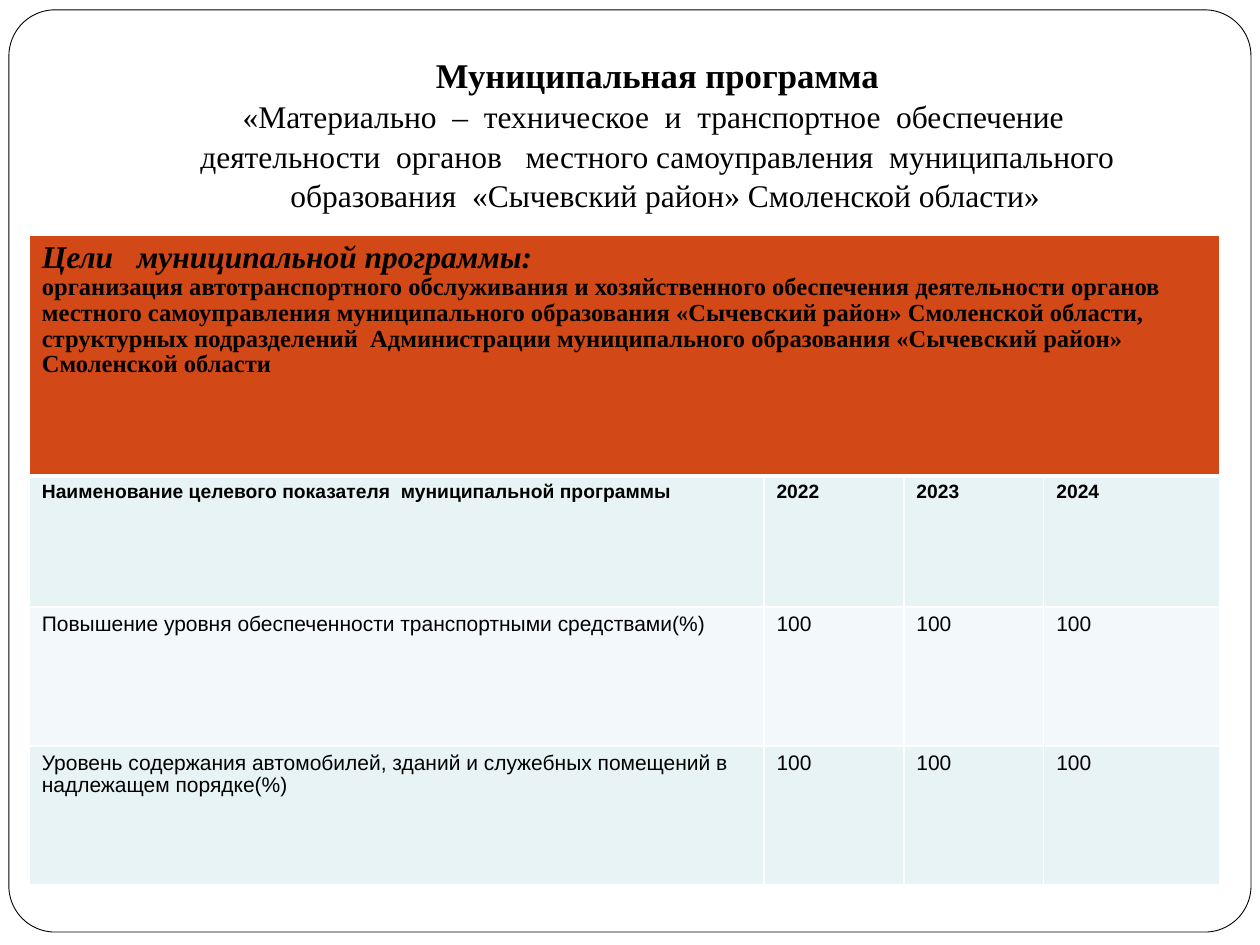
from dataclasses import dataclass

from lxml.etree import SubElement
from pptx import Presentation
from pptx.dml.color import RGBColor
from pptx.enum.shapes import MSO_SHAPE
from pptx.enum.text import MSO_ANCHOR, MSO_AUTO_SIZE, PP_ALIGN
from pptx.oxml.ns import qn
from pptx.util import Cm, Pt


@dataclass(frozen=True)
class Theme:
    black: str = "000000"
    white: str = "FFFFFF"
    goal_fill: str = "D34817"
    bands: tuple = ("E7F3F4", "F3F9FA")
    serif: str = "Times New Roman"
    sans: str = "Arial"
    title: float = 19.8
    subtitle: float = 18
    goal: float = 14
    header: float = 11
    body: float = 12
    title_spacing: float = 1.05
    cell_spacing: float = 0.95


THEME = Theme()
SUBTITLE = (
    "«Материально  –  техническое  и  транспортное  обеспечение  ",
    "деятельности  органов   местного самоуправления  муниципального ",
    " образования  «Сычевский район» Смоленской области»",
)
GOAL_HEADING = "Цели   муниципальной программы:"
GOAL = (
    "организация автотранспортного обслуживания и хозяйственного обеспечения "
    "деятельности органов местного самоуправления муниципального образования "
    "«Сычевский район» Смоленской области, структурных подразделений  "
    "Администрации муниципального образования «Сычевский район» Смоленской области"
)
INDICATORS = (
    ("Наименование целевого показателя  муниципальной программы", "2022", "2023", "2024"),
    ("Повышение уровня обеспеченности транспортными средствами(%)", "100", "100", "100"),
    ("Уровень содержания автомобилей, зданий и служебных помещений в "
     "надлежащем порядке(%)", "100", "100", "100"),
)
COL_WIDTHS = (14.81, 2.82, 2.82, 3.55)
ROW_HEIGHTS = (4.85, 2.64, 2.8, 2.8)


def color(value):
    return RGBColor.from_string(value)


def add_run(p, text, size, font, bold=False, italic=False):
    r = p.add_run()
    r.text = text
    r.font.name = font
    r.font.size = Pt(size)
    r.font.bold = bold
    r.font.italic = italic
    r.font.color.rgb = color(THEME.black)


def add_frame(s):
    """Place the rounded page frame behind the title."""
    frame = s.shapes.add_shape(
        MSO_SHAPE.ROUNDED_RECTANGLE, Cm(0.18), Cm(0.2), Cm(25.04), Cm(18.59))
    frame.adjustments[0] = 0.05
    frame.shadow.inherit = False
    frame.fill.solid()
    frame.fill.fore_color.rgb = color(THEME.white)
    frame.line.color.rgb = color(THEME.black)
    frame.line.width = Pt(0.5)
    s.shapes.title._element.addprevious(frame._element)


def fill_title(title):
    title.left, title.top = Cm(2.54), Cm(0.76)
    title.width, title.height = Cm(21.59), Cm(3.81)
    tf = title.text_frame
    tf.auto_size = MSO_AUTO_SIZE.NONE
    tf.word_wrap = True
    tf.vertical_anchor = MSO_ANCHOR.BOTTOM
    tf.margin_bottom = Cm(0.25)
    p = tf.paragraphs[0]
    p.alignment = PP_ALIGN.CENTER
    p.line_spacing = THEME.title_spacing
    add_run(p, "Муниципальная программа ", THEME.title, THEME.serif, bold=True)
    for line in SUBTITLE:
        p.add_line_break()
        add_run(p, line, THEME.subtitle, THEME.serif)


def set_borders(cell, **widths):
    """Draw white borders; widths maps lnL, lnR, lnT, lnB to points."""
    tc_pr = cell._tc.get_or_add_tcPr()
    for index, side in enumerate(("lnL", "lnR", "lnT", "lnB")):
        ln = SubElement(tc_pr, qn(f"a:{side}"), w=str(Pt(widths.get(side, 1))))
        fill = SubElement(ln, qn("a:solidFill"))
        SubElement(fill, qn("a:srgbClr"), val=THEME.white)
        tc_pr.insert(index, ln)


def style_cell(cell, fill, **borders):
    cell.fill.solid()
    cell.fill.fore_color.rgb = color(fill)
    set_borders(cell, **borders)


def fill_goal_row(table):
    cells = list(table.rows[0].cells)
    for cell in cells:
        style_cell(cell, THEME.goal_fill, lnB=3)
    cells[0].merge(cells[-1])
    tf = cells[0].text_frame
    heading, goal = tf.paragraphs[0], tf.add_paragraph()
    add_run(heading, GOAL_HEADING, THEME.subtitle, THEME.serif, bold=True, italic=True)
    add_run(goal, GOAL, THEME.goal, THEME.serif, bold=True)
    for p in (heading, goal):
        p.line_spacing = THEME.cell_spacing


def fill_indicator_rows(table):
    for i, values in enumerate(INDICATORS):
        is_header = i == 0
        size = THEME.header if is_header else THEME.body
        for cell, text in zip(table.rows[i + 1].cells, values):
            style_cell(cell, THEME.bands[i % 2], lnT=3 if is_header else 1)
            p = cell.text_frame.paragraphs[0]
            p.line_spacing = THEME.cell_spacing
            add_run(p, text, size, THEME.sans, bold=is_header)


def add_program_table(s):
    table = s.shapes.add_table(
        len(ROW_HEIGHTS), len(COL_WIDTHS), Cm(0.59), Cm(4.75),
        Cm(sum(COL_WIDTHS)), Cm(sum(ROW_HEIGHTS))).table
    for column, width in zip(table.columns, COL_WIDTHS):
        column.width = Cm(width)
    for row, height in zip(table.rows, ROW_HEIGHTS):
        row.height = Cm(height)
    fill_goal_row(table)
    fill_indicator_rows(table)


def main():
    prs = Presentation()
    prs.slide_width, prs.slide_height = Cm(25.4), Cm(19.05)
    s = prs.slides.add_slide(prs.slide_layouts.get_by_name("Title Only"))
    fill_title(s.shapes.title)
    add_frame(s)
    add_program_table(s)
    prs.save("out.pptx")


if __name__ == "__main__":
    main()
